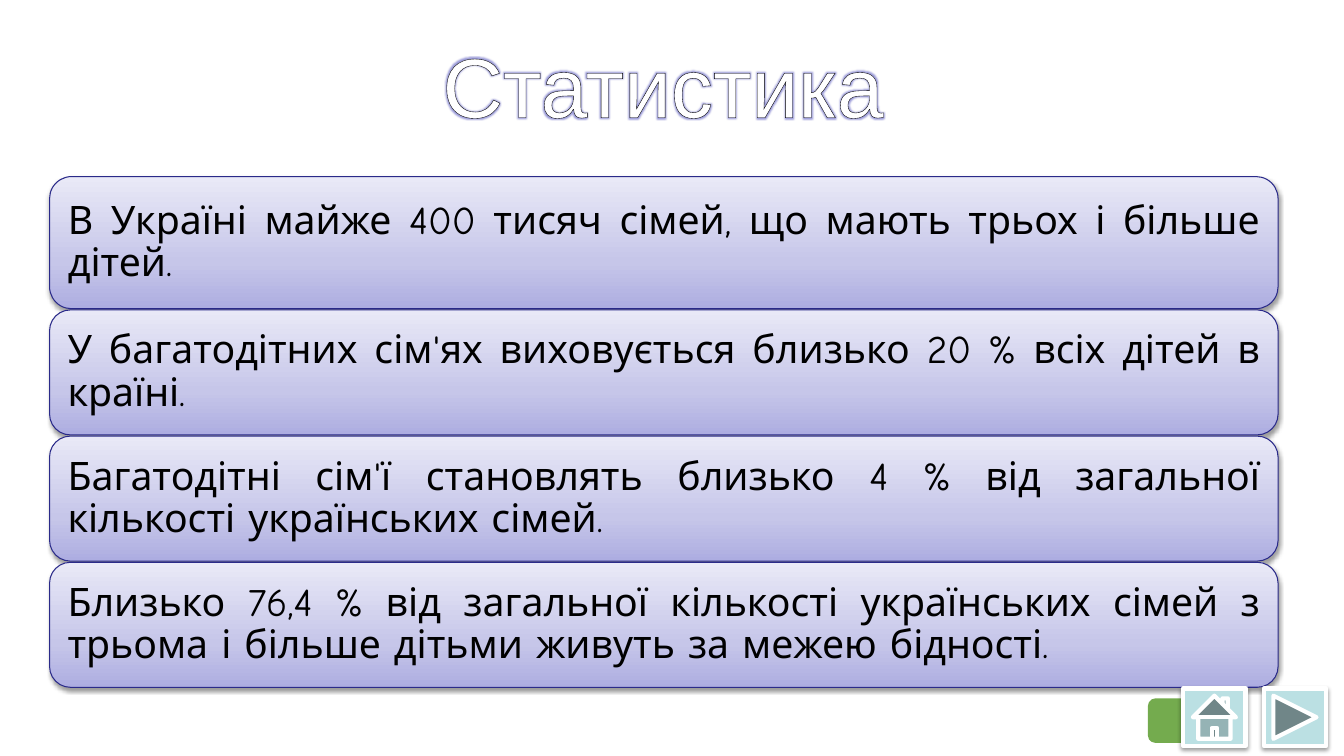
"""Build the statistics slide with four stacked fact cards and navigation buttons."""
from copy import deepcopy

from pptx import Presentation
from pptx.dml.color import RGBColor
from pptx.enum.shapes import MSO_SHAPE
from pptx.enum.text import MSO_ANCHOR, PP_ALIGN
from pptx.oxml import parse_xml
from pptx.oxml.ns import nsdecls, qn
from pptx.util import Cm, Pt

TITLE = "Статистика"
FACTS = [
    "В Україні майже 400 тисяч сімей, що мають трьох і більше дітей.",
    "У багатодітних сім'ях виховується близько 20 % всіх дітей в країні.",
    "Багатодітні сім'ї становлять близько 4 % від загальної кількості українських сімей.",
    "Близько 76,4 % від загальної кількості українських сімей з трьома і більше дітьми "
    "живуть за межею бідності.",
]
BUTTONS = [
    (MSO_SHAPE.ACTION_BUTTON_FORWARD_OR_NEXT, 31.85),
    (MSO_SHAPE.ACTION_BUTTON_HOME, 29.82),
]
THEME = {
    "title": {"name": "Arial", "size": Pt(60), "color": "FFFFFF"},
    "body": {"name": "Comic Neue", "size": Pt(28), "color": "000000"},
    "card_stops": [(0, "ADADE1"), (0.35, "C6C6E9"), (1, "E9E9F7")],
    "card_line": ("2A2A89", 0.75),
    "page_tab": "74AB4E",
    "button": "BBE0E3",
    "button_line": ("FFFFFF", 3),
    "title_glow": "5A5AC0",
}
TITLE_BOX = (1.47, 0.53, 30.48, 3.18)
PAGE_TAB = (28.93, 17.6, 2.46, 1.12)
BUTTON_TOP, BUTTON_WIDTH, BUTTON_HEIGHT = 17.35, 1.57, 1.45
CARD_LEFT, CARD_TOP, CARD_WIDTH = 1.25, 4.45, 30.96
FIRST_CARD_HEIGHT, CARD_HEIGHT, CARD_GAP = 3.33, 3.15, 0.03
CARD_INSET = 0.3


def apply(target, values):
    for name, value in values.items():
        setattr(target, name, value)


def write(text_frame, text, style, alignment, spacing=1.0, inset=0.25):
    margins = ("margin_left", "margin_top", "margin_right", "margin_bottom")
    apply(text_frame, {"word_wrap": True, "vertical_anchor": MSO_ANCHOR.MIDDLE})
    apply(text_frame, dict.fromkeys(margins, Cm(inset)))
    paragraph = text_frame.paragraphs[0]
    apply(paragraph, {"alignment": alignment, "line_spacing": spacing})
    run = paragraph.add_run()
    run.text = text
    apply(run.font, {"name": style["name"], "size": style["size"]})
    run.font.color.rgb = RGBColor.from_string(style["color"])
    return run


def add_shape(slide, kind, box, line=None, color=None):
    shape = slide.shapes.add_shape(kind, *map(Cm, box))
    shape.shadow.inherit = False
    if color:
        shape.fill.solid()
        shape.fill.fore_color.rgb = RGBColor.from_string(color)
    if line:
        shape.line.color.rgb = RGBColor.from_string(line[0])
        shape.line.width = Pt(line[1])
        add_shadow(shape)
    else:
        shape.line.fill.background()
    return shape


def add_shadow(shape):
    effects = shape._element.spPr.find(qn("a:effectLst"))
    effects.append(parse_xml(
        f'<a:outerShdw {nsdecls("a")} blurRad="40000" dist="20000" dir="5400000" '
        'rotWithShape="0"><a:srgbClr val="000000"><a:alpha val="38000"/>'
        '</a:srgbClr></a:outerShdw>'))


def add_card_gradient(shape):
    shape.fill.gradient()
    shape.fill.gradient_angle = 90
    stop_list = shape._element.spPr.find(qn("a:gradFill")).find(qn("a:gsLst"))
    stop_list.append(deepcopy(stop_list[0]))
    for stop, (position, color) in zip(shape.fill.gradient_stops, THEME["card_stops"]):
        stop.position = position
        stop.color.rgb = RGBColor.from_string(color)


def add_title(slide):
    box = slide.shapes.add_textbox(*map(Cm, TITLE_BOX))
    run = write(box.text_frame, TITLE, THEME["title"], PP_ALIGN.CENTER)
    properties = run.font._element
    properties.insert(0, parse_xml(
        f'<a:ln {nsdecls("a")} w="9525"><a:solidFill><a:srgbClr val="000000"/>'
        '</a:solidFill></a:ln>'))
    properties.insert(2, parse_xml(
        f'<a:effectLst {nsdecls("a")}><a:glow rad="38100"><a:srgbClr '
        f'val="{THEME["title_glow"]}"><a:alpha val="60000"/></a:srgbClr></a:glow>'
        '</a:effectLst>'))


def add_cards(slide):
    top = CARD_TOP
    for index, fact in enumerate(FACTS):
        height = CARD_HEIGHT if index else FIRST_CARD_HEIGHT
        box = (CARD_LEFT, top, CARD_WIDTH, height)
        card = add_shape(slide, MSO_SHAPE.ROUNDED_RECTANGLE, box, THEME["card_line"])
        add_card_gradient(card)
        write(card.text_frame, fact, THEME["body"], PP_ALIGN.JUSTIFY, 0.9, CARD_INSET)
        top += height + CARD_GAP


def add_navigation(slide):
    add_shape(slide, MSO_SHAPE.ROUNDED_RECTANGLE, PAGE_TAB, color=THEME["page_tab"])
    for kind, left in BUTTONS:
        box = (left, BUTTON_TOP, BUTTON_WIDTH, BUTTON_HEIGHT)
        add_shape(slide, kind, box, THEME["button_line"], THEME["button"])


def main():
    presentation = Presentation()
    apply(presentation, {"slide_width": Cm(33.87), "slide_height": Cm(19.05)})
    slide = presentation.slides.add_slide(presentation.slide_layouts[6])
    add_title(slide)
    add_cards(slide)
    add_navigation(slide)
    presentation.save("out.pptx")


if __name__ == "__main__":
    main()
